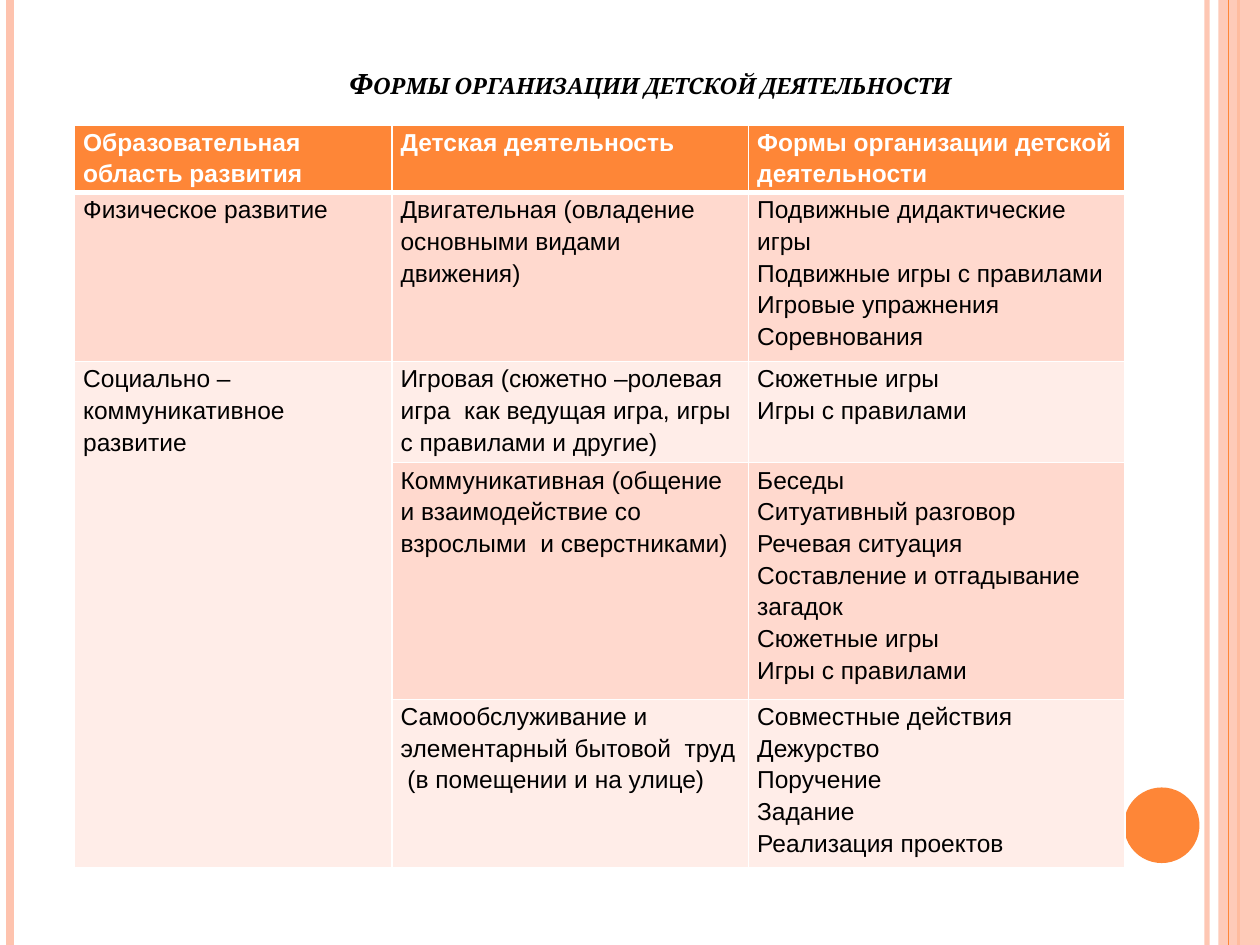
import dataclasses

import pptx
import pptx.dml.color
import pptx.enum.shapes
import pptx.enum.text
import pptx.oxml
import pptx.oxml.ns
import pptx.util

WIDTH, HEIGHT = 10, 7.5
Inches = pptx.util.Inches
SHAPES = pptx.enum.shapes.MSO_SHAPE
ALIGN = pptx.enum.text.PP_ALIGN
ANCHOR = pptx.enum.text.MSO_ANCHOR


@dataclasses.dataclass(frozen=True)
class Theme:
    accent: str = "FE8637"
    stripe: str = "FEC3AE"
    band_dark: str = "FFD9CE"
    band_light: str = "FFEDE8"
    white: str = "FFFFFF"
    black: str = "000000"
    title_font: str = "Cambria"
    body_font: str = "Arial"
    title_size: int = 16
    body_size: int = 14
    border: int = 1
    header_border: int = 3


THEME = Theme()

TITLE = "Формы организации детской деятельности"
COLUMN_WIDTHS = (2.52, 2.83, 2.99)
ROW_HEIGHTS = (0.53, 1.05, 0.78, 1.59, 1.32)
# Each cell is a list of paragraphs; None continues the merged cell above.
ROWS = (
    (["Образовательная область развития"],
     ["Детская деятельность"],
     ["Формы организации детской деятельности"]),
    (["Физическое развитие"],
     ["Двигательная (овладение основными видами движения)"],
     ["Подвижные дидактические игры", "Подвижные игры с правилами",
      "Игровые упражнения", "Соревнования"]),
    (["Социально –коммуникативное  развитие"],
     ["Игровая (сюжетно –ролевая игра  как ведущая игра, игры с правилами и другие)"],
     ["Сюжетные игры", "Игры с правилами"]),
    (None,
     ["Коммуникативная (общение и взаимодействие со взрослыми  и сверстниками)"],
     ["Беседы", "Ситуативный разговор", "Речевая ситуация",
      "Составление и отгадывание загадок", "Сюжетные игры", "Игры с правилами"]),
    (None,
     ["Самообслуживание и элементарный бытовой  труд  (в помещении и на улице)"],
     ["Совместные действия", "Дежурство", "Поручение", "Задание",
      "Реализация проектов"]),
)


def rgb(color):
    return pptx.dml.color.RGBColor.from_string(color)


def set_opacity(element, percent):
    """Add an alpha value to the colour inside the element."""
    color = next(element.iter(pptx.oxml.ns.qn("a:srgbClr")))
    alpha = pptx.oxml.parse_xml(
        f'<a:alpha {pptx.oxml.ns.nsdecls("a")} val="{percent * 1000}"/>')
    color.append(alpha)


def write_text(text_frame, paragraphs, *, font, size, color, bold=False,
               italic=False, small_caps=False, align=ALIGN.LEFT, spacing=1.0):
    text_frame.word_wrap = True
    for index, text in enumerate(paragraphs):
        paragraph = text_frame.add_paragraph() if index else text_frame.paragraphs[0]
        paragraph.alignment = align
        paragraph.line_spacing = spacing
        run = paragraph.add_run()
        run.text = text
        run.font.name = font
        run.font.size = pptx.util.Pt(size)
        run.font.bold = bold
        run.font.italic = italic
        run.font.color.rgb = rgb(color)
        if small_caps:
            run.font._element.set("cap", "small")


def add_stripe(slide, x, color, weight, opacity=100):
    """Draw a vertical line over the full height of the slide."""
    line = slide.shapes.add_connector(
        pptx.enum.shapes.MSO_CONNECTOR.STRAIGHT,
        Inches(x), 0, Inches(x), Inches(HEIGHT))
    line.line.color.rgb = rgb(color)
    line.line.width = pptx.util.Pt(weight)
    properties = line._element.spPr
    if opacity < 100:
        set_opacity(properties, opacity)
    properties.append(pptx.oxml.parse_xml(
        f'<a:effectLst {pptx.oxml.ns.nsdecls("a")}/>'))


def add_filled_shape(slide, kind, left, top, width, height, color, opacity=100):
    shape = slide.shapes.add_shape(
        kind, Inches(left), Inches(top), Inches(width), Inches(height))
    shape.shadow.inherit = False
    shape.fill.solid()
    shape.fill.fore_color.rgb = rgb(color)
    shape.line.fill.background()
    if opacity < 100:
        set_opacity(shape._element.spPr, opacity)


def add_decoration(slide):
    add_stripe(slide, 9.58, THEME.stripe, 3, opacity=93)
    add_stripe(slide, 0.08, THEME.stripe, 4.5)
    add_stripe(slide, 9.83, THEME.accent, 1.5)
    add_filled_shape(slide, SHAPES.RECTANGLE, 9.67, 0, WIDTH - 9.67, HEIGHT,
                     THEME.stripe, opacity=87)
    add_stripe(slide, 9.75, THEME.accent, 0.75)
    add_filled_shape(slide, SHAPES.OVAL, 8.92, 6.25, 0.6, 0.6, THEME.accent)


def add_title(slide):
    box = slide.shapes.add_textbox(Inches(1.06), 0, Inches(8.2), Inches(0.84))
    box.text_frame.vertical_anchor = ANCHOR.BOTTOM
    write_text(box.text_frame, [TITLE], font=THEME.title_font,
               size=THEME.title_size, color=THEME.black, bold=True, italic=True,
               small_caps=True, align=ALIGN.CENTER)


def set_borders(cell, top, bottom):
    """Outline a cell in white; call it before the fill is set."""
    weights = {"L": THEME.border, "R": THEME.border, "T": top, "B": bottom}
    properties = cell._tc.get_or_add_tcPr()
    for side, weight in weights.items():
        properties.append(pptx.oxml.parse_xml(
            f'<a:ln{side} {pptx.oxml.ns.nsdecls("a")} w="{pptx.util.Pt(weight)}">'
            f'<a:solidFill><a:srgbClr val="{THEME.white}"/></a:solidFill>'
            f'</a:ln{side}>'))


def format_cell(cell, row, color):
    set_borders(cell,
                top=THEME.header_border if row == 1 else THEME.border,
                bottom=THEME.header_border if row == 0 else THEME.border)
    cell.fill.solid()
    cell.fill.fore_color.rgb = rgb(color)
    cell.margin_left = cell.margin_right = Inches(0.07)
    cell.margin_top = cell.margin_bottom = 0


def add_activity_table(slide):
    frame = slide.shapes.add_table(
        len(ROWS), len(COLUMN_WIDTHS), Inches(0.59), Inches(0.99),
        Inches(sum(COLUMN_WIDTHS)), Inches(sum(ROW_HEIGHTS)))
    table = frame.table
    table.horz_banding = False
    for column, width in zip(table.columns, COLUMN_WIDTHS):
        column.width = Inches(width)
    for row, height in zip(table.rows, ROW_HEIGHTS):
        row.height = Inches(height)

    for row, contents in enumerate(ROWS):
        is_header = row == 0
        band = THEME.band_dark if row % 2 else THEME.band_light
        for column, paragraphs in enumerate(contents):
            cell = table.cell(row, column)
            if paragraphs is None:
                format_cell(cell, row, THEME.band_light)
                continue
            format_cell(cell, row, THEME.accent if is_header else band)
            write_text(cell.text_frame, paragraphs, font=THEME.body_font,
                       size=THEME.body_size, bold=is_header, spacing=1.15,
                       color=THEME.white if is_header else THEME.black)
    table.cell(2, 0).merge(table.cell(len(ROWS) - 1, 0))


def main():
    presentation = pptx.Presentation()
    presentation.slide_width = Inches(WIDTH)
    presentation.slide_height = Inches(HEIGHT)
    slide = presentation.slides.add_slide(presentation.slide_layouts[6])
    add_decoration(slide)
    add_title(slide)
    add_activity_table(slide)
    presentation.save("out.pptx")


if __name__ == "__main__":
    main()
